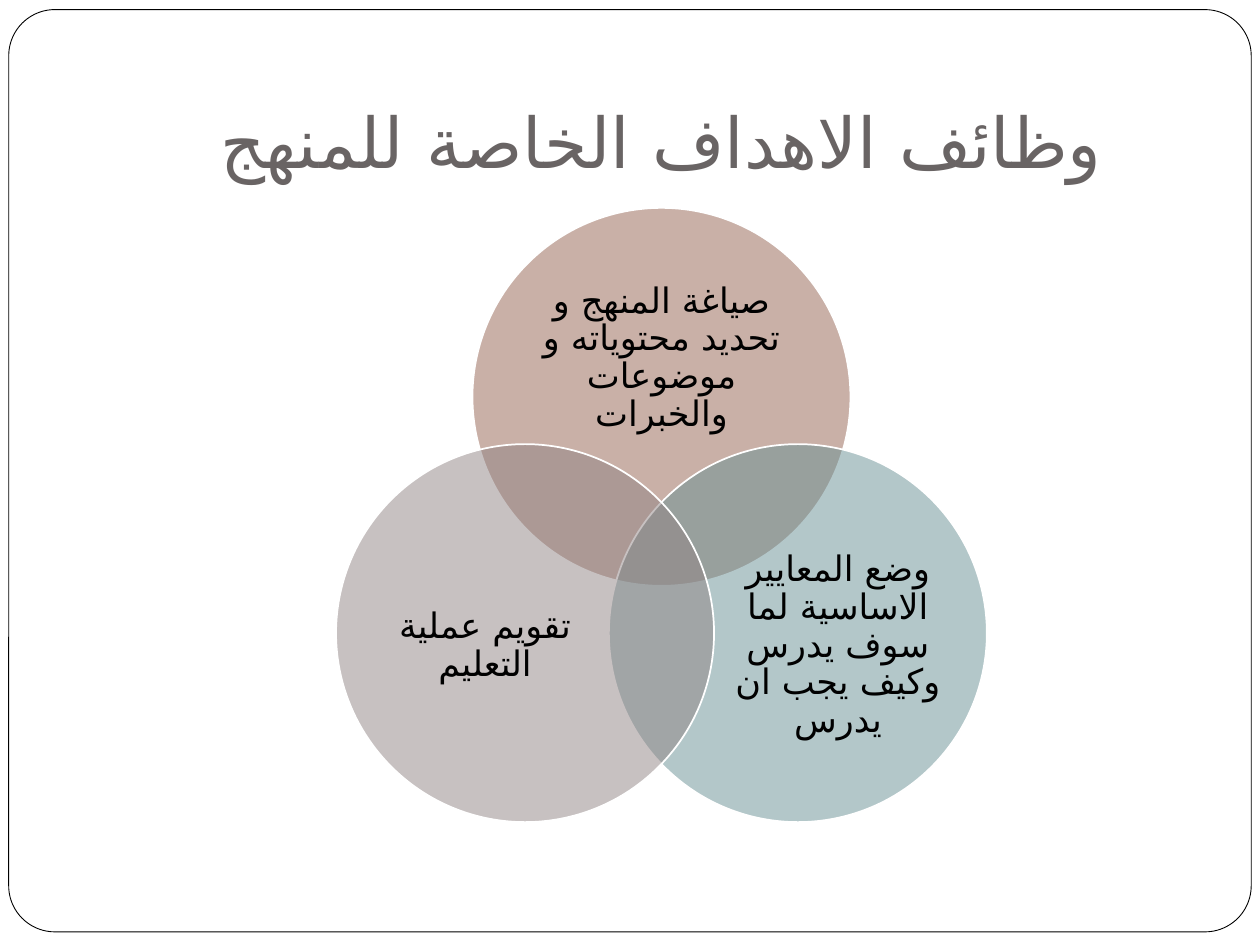
from math import cos, radians, sin

from lxml import etree
from pptx import Presentation
from pptx.dml.color import RGBColor
from pptx.enum.shapes import MSO_SHAPE
from pptx.enum.text import MSO_ANCHOR, PP_ALIGN
from pptx.oxml.ns import qn
from pptx.util import Pt

ROUNDED, OVAL = MSO_SHAPE.ROUNDED_RECTANGLE, MSO_SHAPE.OVAL
MIDDLE, BOTTOM = MSO_ANCHOR.MIDDLE, MSO_ANCHOR.BOTTOM
CENTER = PP_ALIGN.CENTER

WHITE = RGBColor(0xFF, 0xFF, 0xFF)
BLACK = RGBColor(0x00, 0x00, 0x00)
GRAY = RGBColor(0x69, 0x64, 0x64)
BROWN = RGBColor(0x95, 0x62, 0x51)
TEAL = RGBColor(0x68, 0x91, 0x95)
MAUVE = RGBColor(0x91, 0x84, 0x85)
ARABIC_FONT = "DejaVu Sans"

# Content: circle angle, colour, text, text box (left, top, width, height)
TITLE = "وظائف الاهداف الخاصة للمنهج"
CIRCLES = [
    (-90, BROWN, "صياغة المنهج و تحديد محتوياته و موضوعات والخبرات",
     (298.8, 156.24, 158.4, 97.2)),
    (30, TEAL, "وضع المعايير الاساسية لما سوف يدرس وكيف يجب ان يدرس",
     (414, 309.6, 129.6, 118.8)),
    (150, MAUVE, "تقويم عملية التعليم", (212.4, 309.6, 129.6, 118.8)),
]
CENTER_X, CENTER_Y = 378, 316.8
DIAMETER, SPREAD = 216, 90


def add_shape(slide, kind, box, fill, line, line_width, opacity=None):
    shape = slide.shapes.add_shape(kind, *map(Pt, box))
    shape.shadow.inherit = False
    shape.fill.solid()
    shape.fill.fore_color.rgb = fill
    shape.line.color.rgb = line
    shape.line.width = Pt(line_width)
    if opacity is not None:
        color = shape._element.spPr.find(qn("a:solidFill"))[0]
        etree.SubElement(color, qn("a:alpha"), val=str(opacity * 1000))
    return shape


def add_text(slide, text, box, size, font, color, anchor, insets=(0, 0, 0, 0)):
    frame = slide.shapes.add_textbox(*map(Pt, box)).text_frame
    frame.word_wrap = True
    frame.vertical_anchor = anchor
    (frame.margin_left, frame.margin_top,
     frame.margin_right, frame.margin_bottom) = map(Pt, insets)
    paragraph = frame.paragraphs[0]
    paragraph.alignment = CENTER
    paragraph._p.get_or_add_pPr().set("rtl", "1")
    run = paragraph.add_run()
    run.text = text
    run.font.size = Pt(size)
    run.font.name = font
    run.font.color.rgb = color
    # Arabic letters take the complex-script font
    etree.SubElement(run._r.get_or_add_rPr(), qn("a:cs"), typeface=ARABIC_FONT)
    return paragraph


presentation = Presentation()
presentation.slide_width, presentation.slide_height = Pt(720), Pt(540)
slide = presentation.slides.add_slide(presentation.slide_layouts[6])

# Frame and title
frame_shape = add_shape(slide, ROUNDED, (5, 5.5, 710, 527), WHITE, BLACK, 0.5)
frame_shape.adjustments[0] = 0.05
add_text(slide, TITLE, (72, 21.6, 612, 90), 40, "Cabin", GRAY, BOTTOM,
         (7.2, 3.6, 7.2, 7.2))

# Overlapping circles, evenly spaced around a common centre
for angle, color, text, text_box in CIRCLES:
    left = CENTER_X + SPREAD * cos(radians(angle)) - DIAMETER / 2
    top = CENTER_Y + SPREAD * sin(radians(angle)) - DIAMETER / 2
    add_shape(slide, OVAL, (left, top, DIAMETER, DIAMETER), color, WHITE, 1, 50)
    paragraph = add_text(slide, text, text_box, 20, "Times New Roman", BLACK,
                         MIDDLE)
    paragraph.line_spacing = 0.9

presentation.save("out.pptx")
